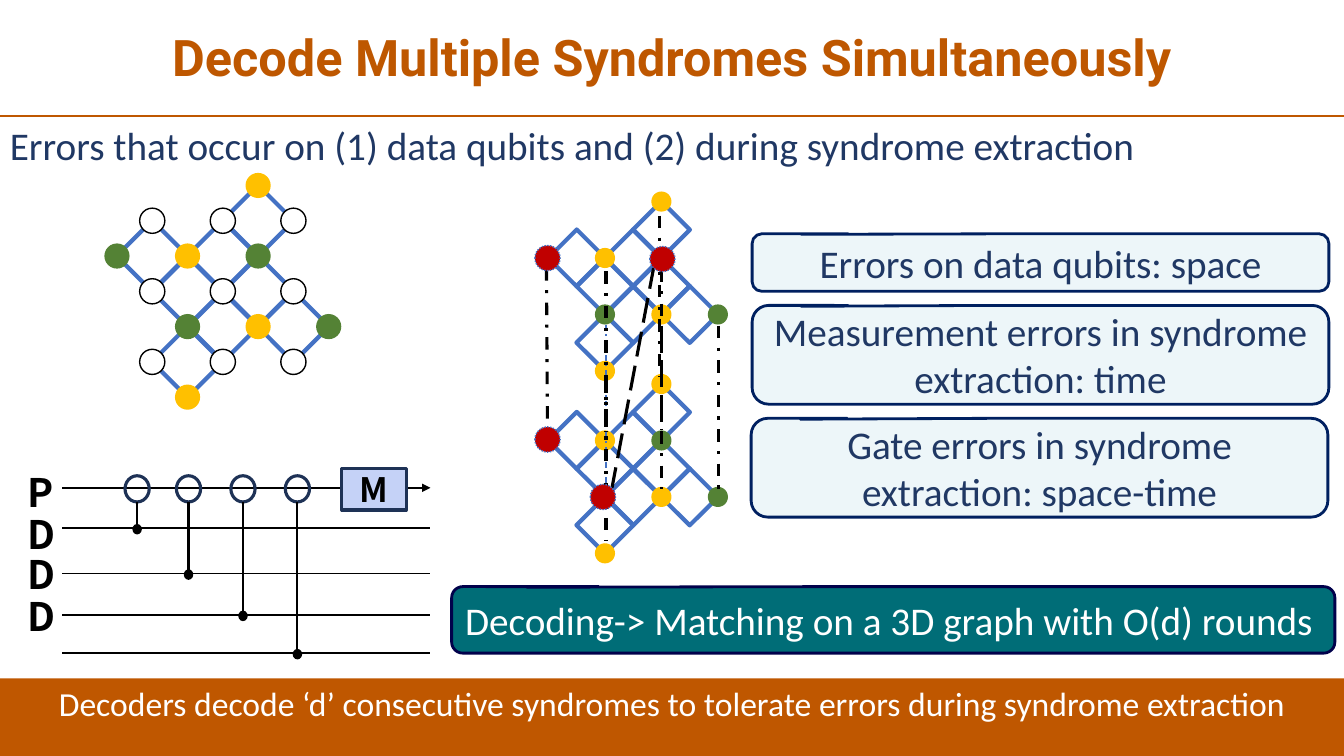
from dataclasses import dataclass

from pptx import Presentation
from pptx.dml.color import RGBColor
from pptx.enum import dml, shapes, text
from pptx.oxml import ns, xmlchemy
from pptx.util import Inches, Pt


@dataclass(frozen=True)
class Theme:
    title: str = "BE5700"
    orange: str = "BF5700"
    navy: str = "203864"
    white: str = "FFFFFF"
    black: str = "000000"
    blue: str = "4472C4"
    yellow: str = "FFC000"
    green: str = "548235"
    red: str = "C00000"
    pale: str = "EDF6F9"
    pale_edge: str = "002060"
    teal: str = "006D77"
    teal_edge: str = "01014B"
    gate: str = "C5D2F7"
    gate_edge: str = "1E3256"
    title_size: int = 36
    body_size: int = 28
    small_size: int = 24
    title_font: str = "Roboto"
    body_font: str = "Calibri"
    label_font: str = "Noto Sans CJK JP"


T = Theme()
SHAPE = shapes.MSO_SHAPE
DASH = dml.MSO_LINE
CENTER = text.PP_ALIGN.CENTER
MIDDLE = text.MSO_ANCHOR.MIDDLE

TILES = [(0, 0), (-1, 1), (0, 2), (1, 3), (-3, 1), (-2, 2), (-1, 3), (-2, 4)]
DATA_QUBITS = [(1, 0), (-1, 0), (1, 2), (-3, 0), (-1, 2), (1, 4), (-3, 2), (-1, 4), (-3, 4)]
YELLOW_CHECKS = [(0, -1), (-2, 1), (0, 3), (-2, 5)]
GREEN_CHECKS = [(0, 1), (2, 3), (-4, 1), (-2, 3)]

TIME_EDGES = [
    (5.42, 2.66, 5.43, 4.27), (7.13, 3.23, 7.13, 4.85), (6.01, 3.77, 6.01, 5.36),
    (6.56, 3.25, 6.56, 4.85), (6.56, 2.67, 6.56, 4.26), (6.54, 2.14, 6.54, 3.73),
    (6.01, 2.69, 6.01, 4.28),
]
FLIPPED_CHECKS = [(5.43, 4.36), (5.98, 4.93), (5.43, 2.56), (6.57, 2.57)]
WIRES = [4.84, 5.24, 5.69, 6.1, 6.48]
GATES = [1.36, 1.87, 2.41, 2.95]
WIRE_LABELS = [("P", 4.63), ("D", 5.05), ("D", 5.44), ("D", 5.86)]


def rgb(color):
    return RGBColor.from_string(color)


def write(tf, words, size=T.body_size, font=T.body_font, color=T.navy, bold=False,
          align=CENTER, anchor=MIDDLE, wrap=True, spacing=None):
    tf.word_wrap = wrap
    tf.vertical_anchor = anchor
    p = tf.paragraphs[0]
    p.alignment = align
    if spacing:
        p.line_spacing = spacing
    r = p.add_run()
    r.text = words
    r.font.size = Pt(size)
    r.font.name = font
    r.font.bold = bold
    r.font.color.rgb = rgb(color)


def text_box(parent, words, x, y, w, h, **style):
    write(parent.add_textbox(Inches(x), Inches(y), Inches(w), Inches(h)).text_frame, words, **style)


def block(parent, kind, x, y, w, h, fill=None, line=None, width=1, dash=None, turn=0):
    sp = parent.add_shape(kind, Inches(x), Inches(y), Inches(w), Inches(h))
    sp.shadow.inherit = False
    sp.rotation = turn
    if fill:
        sp.fill.solid()
        sp.fill.fore_color.rgb = rgb(fill)
    else:
        sp.fill.background()
    if line:
        sp.line.color.rgb = rgb(line)
        sp.line.width = Pt(width)
        if dash:
            sp.line.dash_style = dash
    else:
        sp.line.fill.background()
    return sp


def dot(parent, cx, cy, w, h=None, kind=SHAPE.OVAL, **style):
    h = h or w
    return block(parent, kind, cx - w / 2, cy - h / 2, w, h, **style)


def line(parent, x1, y1, x2, y2, color=T.black, width=1, dash=None, arrow=False):
    c = parent.add_connector(shapes.MSO_CONNECTOR.STRAIGHT,
                             Inches(x1), Inches(y1), Inches(x2), Inches(y2))
    c.line.color.rgb = rgb(color)
    c.line.width = Pt(width)
    if dash:
        c.line.dash_style = dash
    if arrow:
        end = xmlchemy.OxmlElement("a:tailEnd")
        end.set("type", "triangle")
        c.line._get_or_add_ln().append(end)
    c._element.find(ns.qn("p:spPr")).append(xmlchemy.OxmlElement("a:effectLst"))


def callout(parent, words, x, y, w, h, fill=T.pale, edge=T.pale_edge, color=T.navy):
    sp = block(parent, SHAPE.ROUNDED_RECTANGULAR_CALLOUT, x, y, w, h, fill, edge, 2)
    for i, value in enumerate((-0.415, -0.491, 0.167)):
        sp.adjustments[i] = value
    write(sp.text_frame, words, color=color)


def lattice(s, cx, cy, step, tile, check, show_data=False):
    g = s.shapes.add_group_shape().shapes

    def place(cells, size, kind=SHAPE.FLOWCHART_CONNECTOR, **style):
        for col, row in cells:
            dot(g, cx + col * step, cy + row * step, size, kind=kind, turn=45, **style)

    place(TILES, tile, SHAPE.RECTANGLE, line=T.blue, width=3)
    if show_data:
        place(DATA_QUBITS, check, fill=T.white, line=T.black)
    place(YELLOW_CHECKS, check, fill=T.yellow)
    place(GREEN_CHECKS, check, fill=T.green)


def matching(s):
    line(s.shapes, 6.01, 3.22, 6.01, 4.81, T.blue, 1, DASH.DASH_DOT)
    for edge in TIME_EDGES:
        line(s.shapes, *edge, width=2.25, dash=DASH.DASH_DOT)
    line(s.shapes, 6.49, 2.62, 6.07, 4.84, width=2.25, dash=DASH.LONG_DASH)
    for cx, cy in FLIPPED_CHECKS:
        dot(s.shapes, cx, cy, 0.25, kind=SHAPE.FLOWCHART_CONNECTOR,
            fill=T.red, line=T.blue, dash=DASH.ROUND_DOT)


def circuit(s):
    g = s.shapes.add_group_shape().shapes
    for y in WIRES:
        line(g, 0.62, y, 4.27, y, arrow=y == WIRES[0])
    for words, y in WIRE_LABELS:
        text_box(g, words, 0.17, y, 0.42, 0.5, font=T.label_font, color=T.black,
                 bold=True, wrap=False)
    for x, y in zip(GATES, WIRES[1:]):
        dot(g, x, 4.85, 0.24, 0.26, line=T.gate_edge, width=2.25)
        dot(g, x, y + 0.01, 0.08, 0.09, fill=T.black, line=T.black)
        line(g, x, 4.98, x, y - 0.03, width=1.5)
    sp = block(g, SHAPE.RECTANGLE, 3.39, 4.65, 0.64, 0.41, T.gate, T.gate_edge, 2.25)
    write(sp.text_frame, "M", size=T.small_size, font=T.label_font, color=T.black, bold=True)


def heading(s, words):
    sp = s.shapes.title
    sp.left, sp.top, sp.width, sp.height = map(Inches, (0.09, 0.04, 13.15, 1.11))
    write(sp.text_frame, words, size=T.title_size, font=T.title_font, color=T.title,
          bold=True, spacing=0.9)
    line(s.shapes, 0, 1.15, 13.33, 1.15, T.orange, 1.5)


def footer(s, words):
    sp = block(s.shapes, SHAPE.RECTANGLE, 0, 6.73, 13.33, 0.77, T.orange)
    write(sp.text_frame, words, size=T.small_size, color=T.white, anchor=text.MSO_ANCHOR.TOP)


def main():
    prs = Presentation()
    prs.slide_width, prs.slide_height = Inches(13.33), Inches(7.5)
    s = prs.slides.add_slide(prs.slide_layouts[5])
    heading(s, "Decode Multiple Syndromes Simultaneously")
    footer(s, "Decoders decode ‘d’ consecutive syndromes to tolerate errors during syndrome extraction")
    text_box(s.shapes, "Errors that occur on (1) data qubits and (2) during syndrome extraction",
             0, 1.15, 13.33, 0.57, align=text.PP_ALIGN.LEFT, anchor=text.MSO_ANCHOR.TOP)
    for top in (4.09, 2.28):
        lattice(s, 6.56, top, 0.28, 0.4, 0.2)
    lattice(s, 2.56, 2.19, 0.35, 0.5, 0.25, show_data=True)
    matching(s)
    callout(s.shapes, "Errors on data qubits: space", 7.46, 2.32, 5.72, 0.57)
    callout(s.shapes, "Measurement errors in syndrome extraction: time", 7.46, 3.03, 5.72, 0.98)
    callout(s.shapes, "Gate errors in syndrome extraction: space-time", 7.45, 4.15, 5.72, 0.98)
    callout(s.shapes, "Decoding-> Matching on a 3D graph with O(d) rounds ", 4.48, 5.82, 8.76, 0.66,
            T.teal, T.teal_edge, T.white)
    circuit(s)
    prs.save("out.pptx")


if __name__ == "__main__":
    main()
